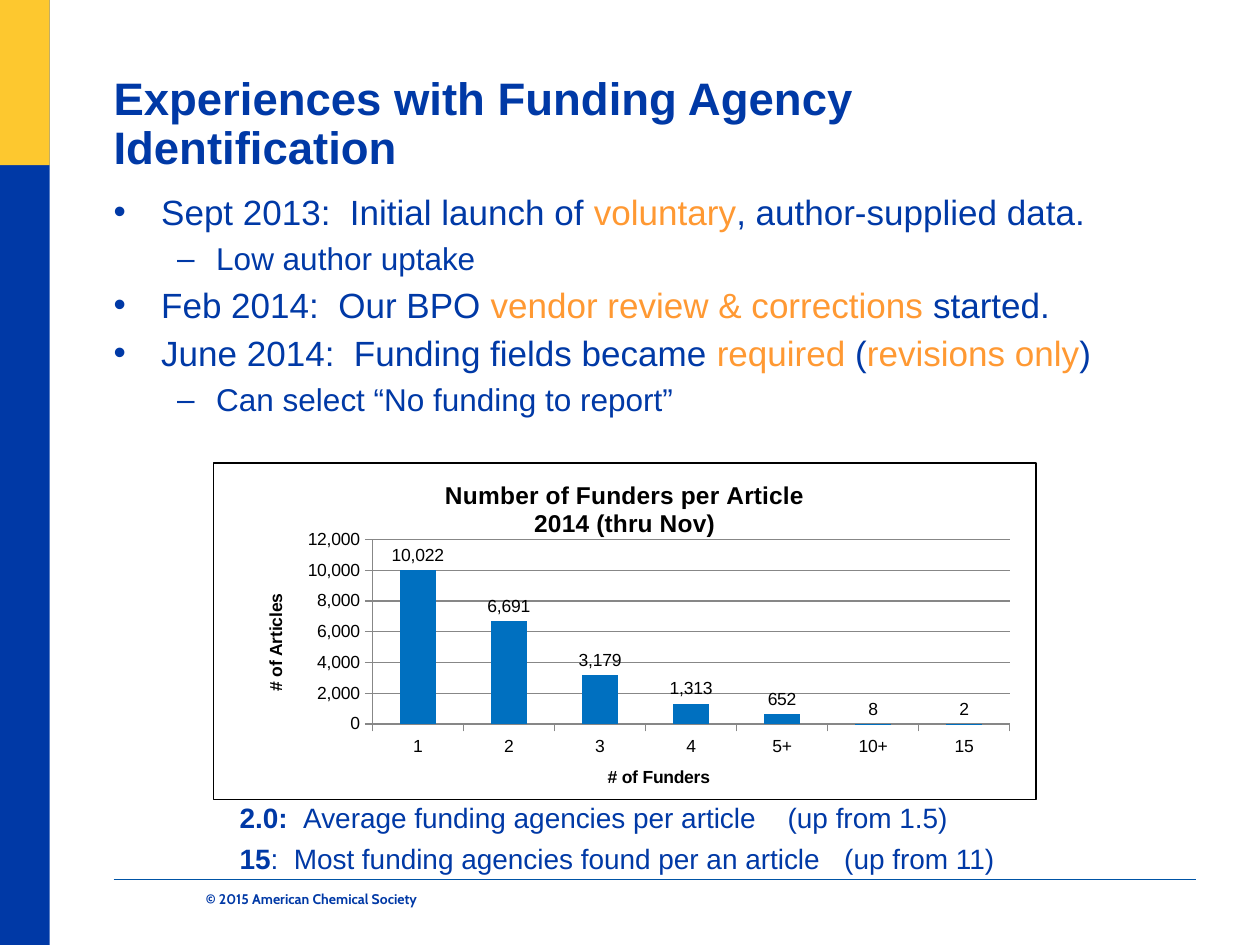
"""Build the funding agency identification slide with its bullets and funder chart."""
from dataclasses import dataclass
from typing import Optional

import lxml.etree
import pptx
import pptx.chart.data
import pptx.dml.color
import pptx.enum.chart
import pptx.enum.shapes
import pptx.enum.text
import pptx.oxml
import pptx.oxml.ns
import pptx.util

Cm = pptx.util.Cm
Pt = pptx.util.Pt
qn = pptx.oxml.ns.qn

COLORS = {
    "navy": "0039A6",
    "gold": "FDC82F",
    "orange": "FF9933",
    "rule": "0054A6",
    "bar": "0070C0",
    "grid": "878787",
    "black": "000000",
}


@dataclass(frozen=True)
class Area:
    left: float
    top: float
    width: float
    height: float

    def lengths(self) -> tuple:
        return tuple(Cm(n) for n in (self.left, self.top, self.width, self.height))


@dataclass(frozen=True)
class Span:
    text: str
    color: str = "navy"
    bold: bool = False


@dataclass(frozen=True)
class Level:
    size: int
    bullet: str = ""
    margin: float = 0
    hanging: float = 0


@dataclass(frozen=True)
class Line:
    level: Level
    spans: tuple
    tab: Optional[float] = None


@dataclass(frozen=True)
class Band:
    area: Area
    color: str


MAIN = Level(20, "•", 0.96, 0.96)
SUB = Level(18, "–", 2.07, 0.79)
SUMMARY = Level(16)

BANDS = (
    Band(Area(0, 0, 1, 19.05), "navy"),
    Band(Area(0, 0, 1, 3.33), "gold"),
)
BULLETS = (
    Line(MAIN, (Span("Sept 2013:  Initial launch of "), Span("voluntary", "orange"),
                Span(", author-supplied data."))),
    Line(SUB, (Span("Low author uptake"),)),
    Line(MAIN, (Span("Feb 2014:  Our BPO "), Span("vendor review & corrections ", "orange"),
                Span("started."))),
    Line(MAIN, (Span("June 2014:  Funding fields became "), Span("required", "orange"),
                Span(" ("), Span("revisions only", "orange"), Span(")"))),
    Line(SUB, (Span("Can select “No funding to report”"),)),
)
FINDINGS = (
    Line(SUMMARY, (Span("2.0:  ", bold=True),
                   Span("Average funding agencies per article\t(up from 1.5)")), 11.05),
    Line(SUMMARY, (Span("15", bold=True),
                   Span(":  Most funding agencies found per an article\t(up from 11)")), 12.19),
)
FUNDERS = {"1": 10022, "2": 6691, "3": 3179, "4": 1313, "5+": 652, "10+": 8, "15": 2}
PLOT = {"x": 0.193, "y": 0.228, "w": 0.775, "h": 0.548}


def rgb(name: str) -> pptx.dml.color.RGBColor:
    return pptx.dml.color.RGBColor.from_string(COLORS[name])


def add_band(page, band: Band) -> None:
    shape = page.shapes.add_shape(pptx.enum.shapes.MSO_SHAPE.RECTANGLE, *band.area.lengths())
    shape.shadow.inherit = False
    shape.fill.solid()
    shape.fill.fore_color.rgb = rgb(band.color)
    shape.line.fill.background()


def add_rule(page, left: float, right: float, top: float) -> None:
    rule = page.shapes.add_connector(
        pptx.enum.shapes.MSO_CONNECTOR.STRAIGHT, Cm(left), Cm(top), Cm(right), Cm(top))
    rule.line.color.rgb = rgb("rule")
    rule.line.width = Pt(0.75)
    lxml.etree.SubElement(rule._element.spPr, qn("a:effectLst"))


def add_lines(page, area: Area, lines: tuple, *, font: str = "Arial", spacing: float = 0.9,
              after: float = 6, align: str = "LEFT", anchor: str = "TOP") -> None:
    box = page.shapes.add_textbox(*area.lengths())
    frame = box.text_frame
    frame.word_wrap = True
    frame.margin_left = frame.margin_right = frame.margin_top = frame.margin_bottom = 0
    frame.vertical_anchor = pptx.enum.text.MSO_ANCHOR[anchor]
    for index, line in enumerate(lines):
        para = frame.add_paragraph() if index else frame.paragraphs[0]
        para.alignment = pptx.enum.text.PP_ALIGN[align]
        para.line_spacing = spacing
        para.space_after = Pt(after)
        properties = para._p.get_or_add_pPr()
        if line.level.bullet:
            properties.set("marL", str(Cm(line.level.margin)))
            properties.set("indent", str(-Cm(line.level.hanging)))
            lxml.etree.SubElement(properties, qn("a:buFont"), typeface=font)
            lxml.etree.SubElement(properties, qn("a:buChar"), char=line.level.bullet)
        if line.tab:
            tabs = lxml.etree.SubElement(properties, qn("a:tabLst"))
            lxml.etree.SubElement(tabs, qn("a:tab"), pos=str(Cm(line.tab)), algn="l")
        for part in line.spans:
            span = para.add_run()
            span.text = part.text
            span.font.name = font
            span.font.size = Pt(line.level.size)
            span.font.bold = part.bold
            span.font.color.rgb = rgb(part.color)


def style_title(owner, text: str, size: int) -> None:
    frame = owner.text_frame
    frame.text = text
    for para in frame.paragraphs:
        para.font.name = "Arial"
        para.font.size = Pt(size)
        para.font.bold = True
        para.font.color.rgb = rgb("black")


def style_axis(axis, title: str) -> None:
    style_title(axis.axis_title, title, 10)
    axis.major_tick_mark = pptx.enum.chart.XL_TICK_MARK.OUTSIDE
    axis.format.line.color.rgb = rgb("grid")


def frame_chart(chart) -> None:
    namespaces = pptx.oxml.ns.nsdecls("c", "a")
    sides = "".join(f'<c:{side} val="{value}"/>' for side, value in PLOT.items())
    layout = pptx.oxml.parse_xml(
        f'<c:layout {namespaces}><c:manualLayout><c:layoutTarget val="inner"/>'
        f'<c:xMode val="edge"/><c:yMode val="edge"/>{sides}</c:manualLayout></c:layout>')
    space = chart._chartSpace
    plot_area = space.chart.plotArea
    for existing in plot_area.findall(qn("c:layout")):
        plot_area.remove(existing)
    plot_area.insert(0, layout)
    space.chart.addnext(pptx.oxml.parse_xml(
        f'<c:spPr {namespaces}><a:noFill/><a:ln w="{Pt(0.75)}"><a:solidFill>'
        f'<a:srgbClr val="{COLORS["black"]}"/></a:solidFill></a:ln></c:spPr>'))


def add_funder_chart(page, area: Area) -> None:
    data = pptx.chart.data.CategoryChartData(number_format="#,##0")
    data.categories = list(FUNDERS)
    data.add_series("Series 1", list(FUNDERS.values()))
    chart = page.shapes.add_chart(
        pptx.enum.chart.XL_CHART_TYPE.COLUMN_CLUSTERED, *area.lengths(), data).chart
    chart.font.name = "Arial"
    chart.font.size = Pt(10)
    chart.font.color.rgb = rgb("black")
    chart.has_legend = False
    style_title(chart.chart_title, "Number of Funders per Article\n2014 (thru Nov)", 14)
    style_axis(chart.category_axis, "# of Funders")
    style_axis(chart.value_axis, "# of Articles")
    chart.value_axis.maximum_scale = 12000
    chart.value_axis.minimum_scale = 0
    chart.value_axis.major_unit = 2000
    chart.value_axis.tick_labels.number_format = "#,##0"
    chart.value_axis.tick_labels.number_format_is_linked = False
    chart.value_axis.major_gridlines.format.line.color.rgb = rgb("grid")
    plot = chart.plots[0]
    plot.vary_by_categories = False
    plot.gap_width = 150
    fill = plot.series[0].format.fill
    fill.solid()
    fill.fore_color.rgb = rgb("bar")
    plot.has_data_labels = True
    labels = plot.data_labels
    labels.show_value = True
    labels.number_format = "#,##0"
    labels.number_format_is_linked = False
    labels.position = pptx.enum.chart.XL_LABEL_POSITION.OUTSIDE_END
    frame_chart(chart)


def main() -> None:
    deck = pptx.Presentation()
    deck.slide_width, deck.slide_height = Cm(25.4), Cm(19.05)
    page = deck.slides.add_slide(deck.slide_layouts[6])
    for band in BANDS:
        add_band(page, band)
    add_rule(page, 2.29, 24.1, 17.73)
    title = Line(Level(26), (Span("Experiences with Funding Agency Identification", bold=True),))
    add_lines(page, Area(2.29, 0.89, 15.6, 2.62), (title,), after=0, anchor="BOTTOM")
    add_lines(page, Area(2.29, 3.93, 21.84, 5), BULLETS)
    add_lines(page, Area(4.83, 16.22, 19.3, 1.5), FINDINGS)
    footer = Line(Level(8), (Span("© 2015 American Chemical Society", bold=True),))
    add_lines(page, Area(2.26, 17.96, 8.05, 0.79), (footer,),
              font="Cabin", spacing=1, after=0, align="CENTER")
    add_funder_chart(page, Area(4.29, 9.32, 16.61, 6.81))
    deck.save("out.pptx")


if __name__ == "__main__":
    main()
